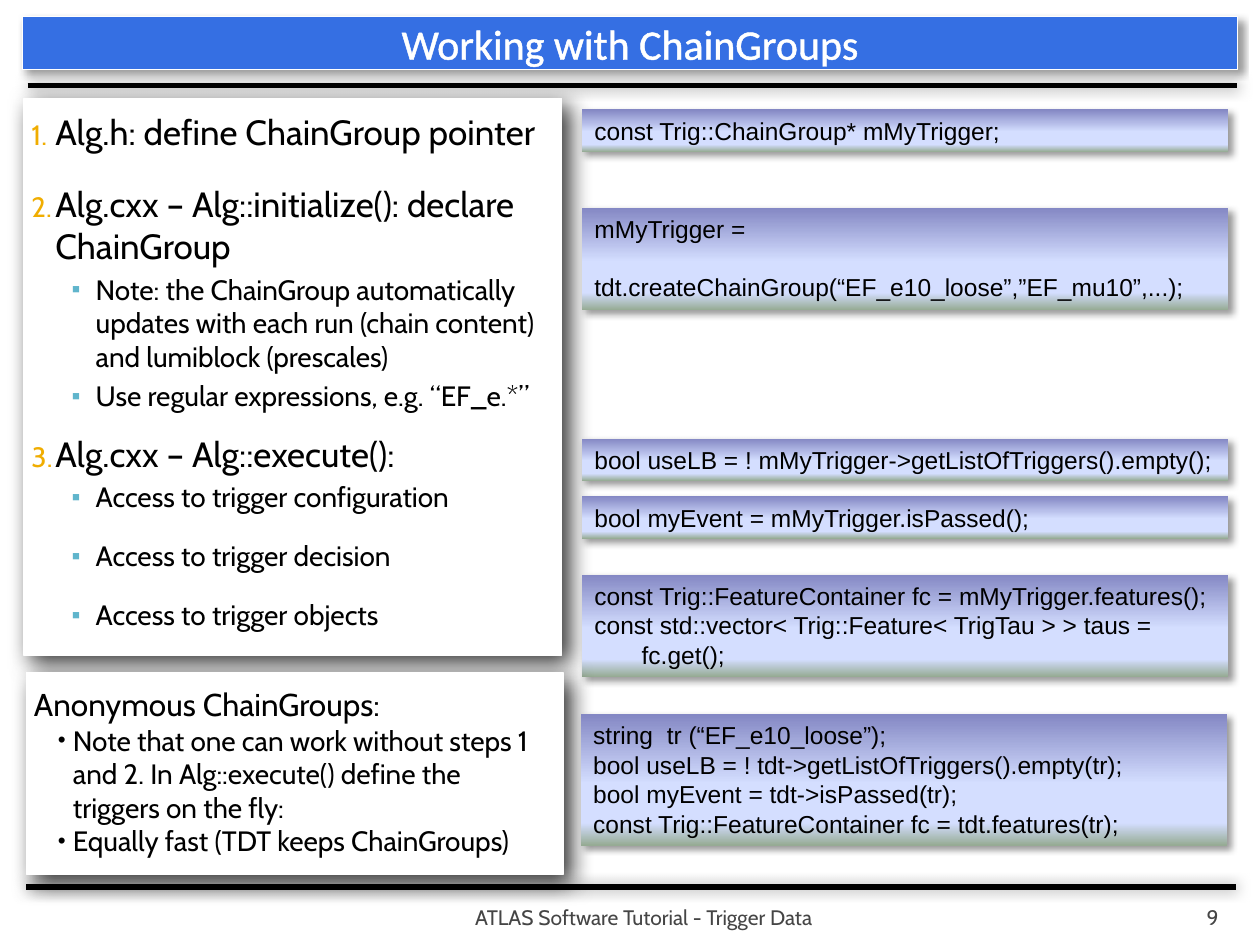
"""Build the ChainGroups tutorial slide."""
from dataclasses import dataclass

from lxml import etree
from pptx import Presentation
from pptx.dml.color import RGBColor
from pptx.enum.shapes import MSO_CONNECTOR, MSO_SHAPE
from pptx.enum.text import MSO_ANCHOR, MSO_AUTO_SIZE, PP_ALIGN
from pptx.oxml.ns import qn
from pptx.util import Pt

RECTANGLE = MSO_SHAPE.RECTANGLE
STRAIGHT = MSO_CONNECTOR.STRAIGHT
TOP, MIDDLE, BOTTOM = MSO_ANCHOR.TOP, MSO_ANCHOR.MIDDLE, MSO_ANCHOR.BOTTOM
LEFT, CENTER, RIGHT = PP_ALIGN.LEFT, PP_ALIGN.CENTER, PP_ALIGN.RIGHT
GROW = MSO_AUTO_SIZE.SHAPE_TO_FIT_TEXT


@dataclass(frozen=True)
class Theme:
    """Hold colours, fonts, type sizes and shadows."""
    black: str = "000000"
    white: str = "FFFFFF"
    title_fill: str = "356FE3"
    footer: str = "454545"
    number: str = "F0AD00"
    square: str = "60B5CC"
    code_stops: tuple = ((0, "8488C4"), (53, "D4DEFF"), (83, "D4DEFF"), (100, "96AB94"))
    title_font: str = "Calibri"
    body_font: str = "Cabin"
    code_font: str = "Arial"
    title_size: int = 24
    step_size: int = 20
    heading_size: int = 18
    detail_size: int = 16
    code_size: int = 14
    footer_size: int = 12
    rule_shadow: tuple = (50, 7.5, 0, 0)
    panel_shadow: tuple = (78, 13, 6, 45)
    band_shadow: tuple = (40, 4, 3, 45)


THEME = Theme()
PANEL_INSETS = (4.3, 7.2, 7.2, 3.6)
CODE_LEFT, CODE_WIDTH = 332.6, 369.4


def add_node(parent, tag, **attributes):
    """Append an XML child with the given attributes."""
    values = {name: str(value) for name, value in attributes.items()}
    return etree.SubElement(parent, qn(tag), values)


def set_shadow(item, shadow):
    """Give a shape or connector an outer shadow."""
    alpha, blur, distance, angle = shadow
    effects = add_node(item._element.spPr, "a:effectLst")
    outer = add_node(effects, "a:outerShdw", blurRad=Pt(blur), dist=Pt(distance),
                     dir=angle * 60000, algn="ctr", rotWithShape=0)
    color = add_node(outer, "a:srgbClr", val=THEME.black)
    add_node(color, "a:alpha", val=alpha * 1000)


def add_rule(page, left, top):
    """Draw one heavy horizontal rule."""
    rule = page.shapes.add_connector(STRAIGHT, Pt(left), Pt(top), Pt(left + 691.2), Pt(top))
    rule.line.color.rgb = RGBColor.from_string(THEME.black)
    rule.line.width = Pt(3)
    set_shadow(rule, THEME.rule_shadow)


def set_frame(box, anchor=TOP, insets=(7.2, 3.6, 7.2, 3.6)):
    """Set wrapping, anchor and insets, and return the text frame."""
    frame = box.text_frame
    frame.word_wrap = True
    frame.vertical_anchor = anchor
    frame.margin_left, frame.margin_top, frame.margin_right, frame.margin_bottom = map(Pt, insets)
    return frame


def add_panel(page, left, top, width, height, fill, shadow, **frame_format):
    """Add a white-edged rectangle and return its text frame."""
    box = page.shapes.add_shape(RECTANGLE, Pt(left), Pt(top), Pt(width), Pt(height))
    box.fill.solid()
    box.fill.fore_color.rgb = RGBColor.from_string(fill)
    box.line.color.rgb = RGBColor.from_string(THEME.white)
    box.line.width = Pt(0.75)
    set_shadow(box, shadow)
    return set_frame(box, **frame_format)


def set_bullet(para, char=None, color=None, size=80):
    """Give a paragraph a bullet character, or a number without one."""
    props = para._p.get_or_add_pPr()
    if color:
        add_node(add_node(props, "a:buClr"), "a:srgbClr", val=color)
    add_node(props, "a:buSzPct", val=size * 1000)
    if char:
        add_node(props, "a:buFont", typeface="Arial")
        add_node(props, "a:buChar", char=char)
    else:
        add_node(props, "a:buFont", typeface="+mj-lt")
        add_node(props, "a:buAutoNum", type="arabicPeriod")


def add_text(frame, text, size, font=THEME.body_font, color=THEME.black, align=LEFT,
             before=0, level=0, indent=0, hanging=0, bullet=None):
    """Add a formatted paragraph and return its run."""
    para = frame.paragraphs[0]
    if para.runs:
        para = frame.add_paragraph()
    para.alignment = align
    para.level = level
    para.space_before = Pt(before)
    props = para._p.get_or_add_pPr()
    props.set("marL", str(Pt(indent)))
    props.set("indent", str(Pt(-hanging)))
    if bullet is not None:
        set_bullet(para, **bullet)
    span = para.add_run()
    span.text = text
    span.font.size = Pt(size)
    span.font.name = font
    span.font.color.rgb = RGBColor.from_string(color)
    return span


def add_title(page, text):
    """Add the title band with outlined letters."""
    frame = add_panel(page, 13, 9.4, 694.1, 30.2, THEME.title_fill, THEME.band_shadow, anchor=MIDDLE)
    span = add_text(frame, text, THEME.title_size, font=THEME.title_font,
                    color=THEME.white, align=CENTER)
    outline = etree.Element(qn("a:ln"), w=str(Pt(0.83)))
    add_node(add_node(outline, "a:solidFill"), "a:srgbClr", val=THEME.white)
    span.font._element.insert(0, outline)


def add_footer(page, left, width, text, align, side):
    """Add one footer text."""
    box = page.shapes.add_textbox(Pt(left), Pt(509.8), Pt(width), Pt(21.6))
    frame = set_frame(box, anchor=BOTTOM, insets=(side, 3.6, side, 0))
    add_text(frame, text, THEME.footer_size, color=THEME.footer, align=align)


def add_code(page, top, height, lines, left=CODE_LEFT):
    """Add a gradient code box from (text, format) lines."""
    box = page.shapes.add_shape(RECTANGLE, Pt(left), Pt(top), Pt(CODE_WIDTH), Pt(height))
    box.fill.gradient()
    box.fill.gradient_angle = 270
    stops = box._element.spPr.find(".//" + qn("a:gsLst"))
    stops.clear()
    for position, color in THEME.code_stops:
        add_node(add_node(stops, "a:gs", pos=position * 1000), "a:srgbClr", val=color)
    box.line.fill.background()
    set_shadow(box, THEME.band_shadow)
    frame = set_frame(box)
    frame.auto_size = GROW
    for text, line_format in lines:
        add_text(frame, text, THEME.code_size, font=THEME.code_font, **line_format)


def add_steps(page):
    """Add the numbered steps with their details."""
    frame = add_panel(page, 13.7, 56.2, 307.4, 318.2, THEME.white, THEME.panel_shadow,
                      insets=PANEL_INSETS)
    steps = (
        ("Alg.h: define ChainGroup pointer", 0, ()),
        ("Alg.cxx – Alg::initialize(): declare ChainGroup", 17, (
            ("Note: the ChainGroup automatically updates with each run (chain content) "
             "and lumiblock (prescales)", 3.2),
            ("Use regular expressions, e.g. “EF_e.*”", 3.2))),
        ("Alg.cxx – Alg::execute():", 11.3, (
            ("Access to trigger configuration", 3.2),
            ("Access to trigger decision", 14.5),
            ("Access to trigger objects", 14.5))),
    )
    for step, gap, details in steps:
        add_text(frame, step, THEME.step_size, before=gap, indent=13.7, hanging=13.7,
                 bullet={"color": THEME.number})
        for detail, detail_gap in details:
            add_text(frame, detail, THEME.detail_size, before=detail_gap, level=1, indent=36.7,
                     hanging=13.7, bullet={"char": "▪", "color": THEME.square, "size": 90})


def add_anonymous(page):
    """Add the panel about anonymous groups."""
    frame = add_panel(page, 15.1, 384.5, 306.7, 115.2, THEME.white, THEME.panel_shadow,
                      insets=PANEL_INSETS)
    add_text(frame, "Anonymous ChainGroups:", THEME.heading_size)
    for text in ("Note that one can work without steps 1 and 2. In Alg::execute() define the "
                 "triggers on the fly:", "Equally fast (TDT keeps ChainGroups)"):
        add_text(frame, text, THEME.detail_size, indent=22.3, hanging=8.6, bullet={"char": "•"})


def main():
    """Build and save the deck."""
    deck = Presentation()
    deck.slide_width, deck.slide_height = Pt(720), Pt(540)
    page = deck.slides.add_slide(deck.slide_layouts[6])
    add_rule(page, 15.8, 49)
    add_rule(page, 15.1, 506.9)
    add_footer(page, 151.2, 433.4, "ATLAS Software Tutorial - Trigger Data", CENTER, 3.6)
    add_footer(page, 645.8, 57.6, "9", RIGHT, 7.2)
    add_steps(page)
    add_title(page, "Working with ChainGroups")
    add_code(page, 250.6, 24.2, [("bool useLB = ! mMyTrigger->getListOfTriggers().empty();", {})])
    add_code(page, 283.7, 24.2, [("bool myEvent = mMyTrigger.isPassed();", {})])
    add_code(page, 328.3, 58.3, [
        ("const Trig::FeatureContainer fc = mMyTrigger.features();", {}),
        ("const std::vector< Trig::Feature< TrigTau > > taus =", {}),
        ("fc.get();", {"indent": 27})])
    add_code(page, 118.8, 58.3, [
        ("mMyTrigger =", {}),
        ("tdt.createChainGroup(“EF_e10_loose”,”EF_mu10”,...);", {"before": 16.5})])
    add_code(page, 62.6, 24.2, [("const Trig::ChainGroup* mMyTrigger;", {})])
    add_anonymous(page)
    add_code(page, 408.2, 74.9, [(text, {}) for text in (
        "string  tr (“EF_e10_loose”);",
        "bool useLB = ! tdt->getListOfTriggers().empty(tr);",
        "bool myEvent = tdt->isPassed(tr);",
        "const Trig::FeatureContainer fc = tdt.features(tr);")], left=331.9)
    deck.save("out.pptx")


if __name__ == "__main__":
    main()
